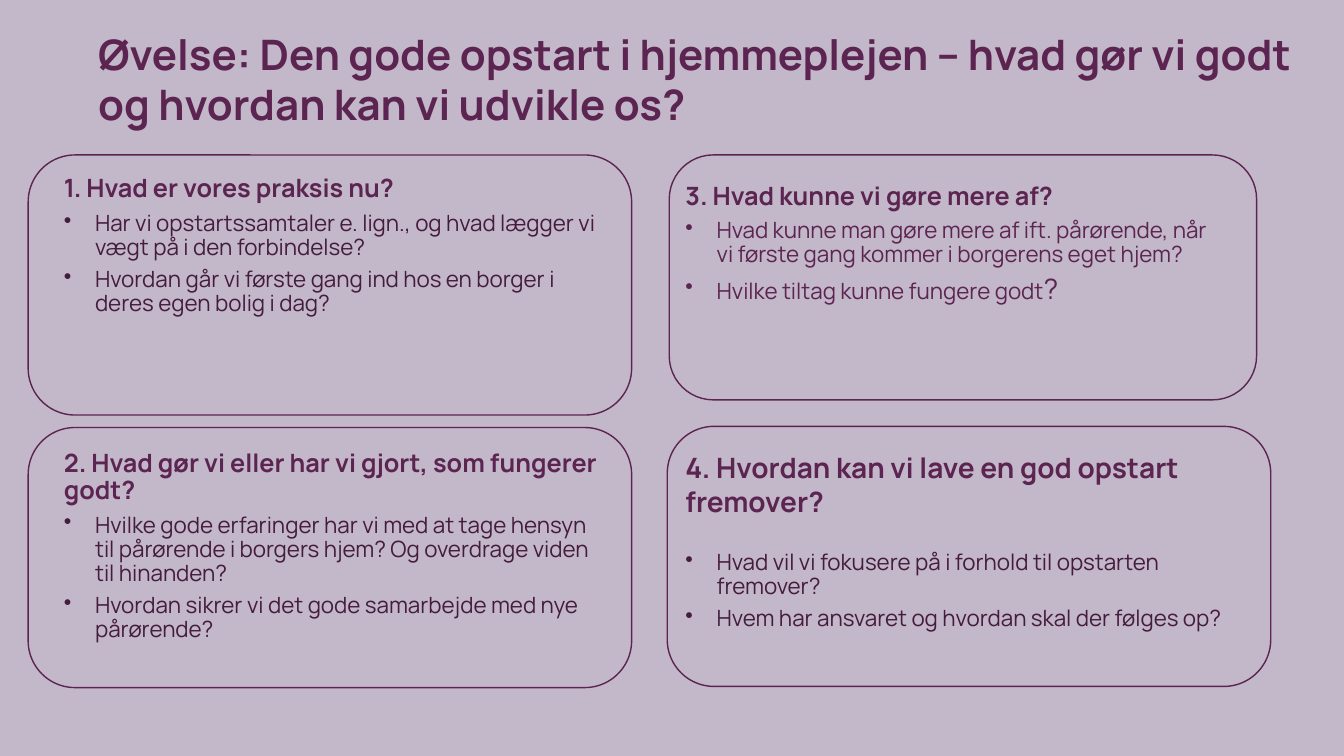
import pptx
import pptx.util
import pptx.dml.color
import pptx.enum.shapes
import pptx.enum.text
from lxml import etree

Pt = pptx.util.Pt
RGB = pptx.dml.color.RGBColor
LILAC = RGB(0xC3, 0xB7, 0xCA)
PLUM = RGB(0x5C, 0x25, 0x51)
DARK = RGB(0x45, 0x1C, 0x3D)
FONT = "Manrope"
WIDE, HIGH = pptx.util.Inches(13.33), pptx.util.Inches(7.5)
COL, ROW = WIDE / 100, HIGH / 100
BODY = 16
HANG = pptx.util.Inches(0.31)
NS = "http://schemas.openxmlformats.org/drawingml/2006/main"

# box and inset (left, top, text width) in columns and rows
PANELS = [
    dict(box=(2.1, 20.5, 44.9, 34.4), inset=(2.65, 2.8, 39.7),
         head="1. Hvad er vores praksis nu?",
         items=["Har vi opstartssamtaler e. lign., og hvad lægger vi vægt på "
                "i den forbindelse?",
                "Hvordan går vi første gang ind hos en borger i deres egen "
                "bolig i dag?"]),
    dict(box=(2.1, 56.55, 44.9, 34.4), inset=(2.65, 3.05, 40.65),
         head="2. Hvad gør vi eller har vi gjort, som fungerer godt?",
         items=["Hvilke gode erfaringer har vi med at tage hensyn til "
                "pårørende i borgers hjem? Og overdrage viden til hinanden?",
                "Hvordan sikrer vi det gode samarbejde med nye pårørende?"]),
    dict(box=(49.8, 20.5, 43.7, 32.4), inset=(1.2, 3.75, 38.85),
         head="3. Hvad kunne vi gøre mere af?", color=PLUM,
         items=["Hvad kunne man gøre mere af ift. pårørende, når vi første "
                "gang kommer i borgerens eget hjem?",
                "Hvilke tiltag kunne fungere godt"], tail="?"),
    dict(box=(49.65, 56.4, 44.9, 34.4), inset=(1.35, 3.2, 41.25),
         head="4. Hvordan kan vi lave en god opstart fremover?",
         size=20, pitch=1.0, after=0, gap=24,
         items=["Hvad vil vi fokusere på i forhold til opstarten fremover?",
                "Hvem har ansvaret og hvordan skal der følges op?"]),
]


def place(left, top, width, height):
    """Turn columns and rows into slide lengths."""
    return [round(n) for n in (left * COL, top * ROW, width * COL, height * ROW)]


def add_text(slide, box):
    frame = slide.shapes.add_textbox(*place(*box)).text_frame
    frame.word_wrap = True
    frame.auto_size = pptx.enum.text.MSO_AUTO_SIZE.NONE
    frame.margin_left = frame.margin_right = 0
    frame.margin_top = frame.margin_bottom = 0
    return frame


def style(para, size, color, bold=False):
    font = para.font
    font.name, font.size, font.bold = FONT, Pt(size), bold
    font.color.rgb = color


def add_item(frame, text, color):
    para = frame.add_paragraph()
    para.text = text
    props = para._p.get_or_add_pPr()
    props.set("marL", str(HANG))
    props.set("indent", str(-HANG))
    etree.SubElement(props, f"{{{NS}}}buChar").set("char", "•")
    para.line_spacing = 0.9
    para.space_after = Pt(0.35 * BODY)
    style(para, BODY, color)
    return para


def add_title(slide, box):
    para = add_text(slide, box).paragraphs[0]
    para.text = ("Øvelse: Den gode opstart i hjemmeplejen – hvad gør vi godt "
                 "og hvordan kan vi udvikle os?")
    style(para, 30, PLUM, True)


def add_panel(slide, box, inset, head, items, color=DARK, size=18,
              pitch=0.9, after=6.3, gap=0, tail=""):
    """Draw an outlined panel with a heading and bullets inside it."""
    kind = pptx.enum.shapes.MSO_SHAPE.ROUNDED_RECTANGLE
    frame = slide.shapes.add_shape(kind, *place(*box))
    frame.adjustments[0] = 0.18
    frame.shadow.inherit = False
    frame.fill.background()
    frame.line.color.rgb = PLUM
    frame.line.width = Pt(1)

    left, top, width, height = box
    dx, dy, wide = inset
    text = add_text(slide, (left + dx, top + dy, wide, height - dy))
    para = text.paragraphs[0]
    para.text = head
    para.line_spacing = pitch
    para.space_after = Pt(after)
    style(para, size, PLUM, True)
    paras = [add_item(text, item, color) for item in items]
    if gap:
        paras[0].space_before = Pt(gap)
    if tail:
        run = paras[-1].add_run()
        run.text = tail
        run.font.size = Pt(20)


def main():
    deck = pptx.Presentation()
    deck.slide_width, deck.slide_height = WIDE, HIGH
    slide = deck.slides.add_slide(deck.slide_layouts[6])
    slide.background.fill.solid()
    slide.background.fill.fore_color.rgb = LILAC
    add_title(slide, (7.3, 3.75, 91.15, 13.45))
    for panel in PANELS:
        add_panel(slide, **panel)
    deck.save("out.pptx")


if __name__ == "__main__":
    main()
